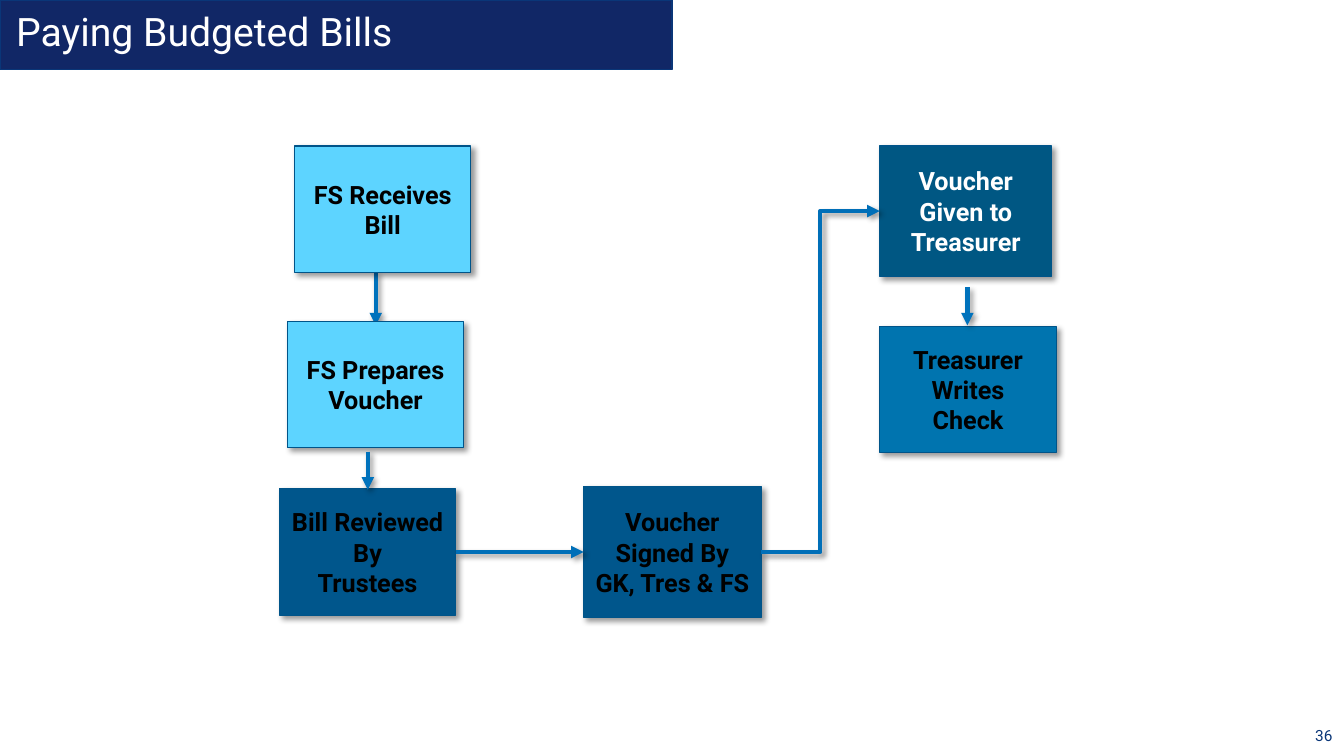
"""Build the slide that shows how budgeted bills are paid."""
import pptx
import pptx.dml.color
import pptx.enum.shapes
import pptx.enum.text
import pptx.oxml
import pptx.oxml.ns
import pptx.util

Cm = pptx.util.Cm
Pt = pptx.util.Pt
ALIGN = pptx.enum.text.PP_ALIGN
ANCHOR = pptx.enum.text.MSO_ANCHOR
SHAPE = pptx.enum.shapes.MSO_SHAPE
CONNECTOR = pptx.enum.shapes.MSO_CONNECTOR

THEME = {
    "font": "Roboto",
    "title_size": 28, "box_size": 18, "number_size": 11,
    "white": "FFFFFF", "black": "000000", "navy": "112766", "navy_edge": "0A3678",
    "sky": "5DD4FF", "deep": "00568C", "teal": "005783", "mid": "0074AF",
    "box_edge": "005489", "arrow": "0072BC", "elbow": "006FB8",
}

TITLE = "Paying Budgeted Bills"
PAGE_NUMBER = "36"
STEPS = {
    "receive": (["FS Receives", "Bill"], (7.42, 3.68, 4.45, 3.18), "sky", "black"),
    "review": (["Bill Reviewed", "By", "Trustees"], (7.04, 12.32, 4.45, 3.18), "deep", "black"),
    "prepare": (["FS Prepares", "Voucher"], (7.24, 8.1, 4.45, 3.18), "sky", "black"),
    "sign": (["Voucher", "Signed By", "GK, Tres & FS"], (14.71, 12.27, 4.47, 3.28), "deep", "black"),
    "give": (["Voucher", "Given to", "Treasurer"], (22.17, 3.68, 4.34, 3.28), "teal", "white"),
    "write": (["Treasurer", "Writes", "Check"], (22.17, 8.23, 4.45, 3.18), "mid", "black"),
}
RECEIVE_ARROW = (9.47, 6.86, 8.2)
LATER_ARROWS = [(9.27, 11.38, 12.34), (24.38, 7.24, 8.2)]
ELBOWS = [("review", "sign"), ("sign", "give")]


def color(name):
    return pptx.dml.color.RGBColor.from_string(THEME[name])


def write_text(shape, lines, *, size, ink, bold=False, align=ALIGN.LEFT,
               anchor=ANCHOR.TOP, wrap=True, spacing=None):
    frame = shape.text_frame
    frame.word_wrap = wrap
    frame.vertical_anchor = anchor
    frame.text = "\n".join(lines)
    for paragraph in frame.paragraphs:
        paragraph.alignment = align
        paragraph.line_spacing = spacing
        font = paragraph.runs[0].font
        font.name = THEME["font"]
        font.size = Pt(THEME[size])
        font.bold = bold
        font.color.rgb = color(ink)


def add_shadow(shape):
    shape._element.spPr.append(pptx.oxml.parse_xml(
        f'<a:effectLst {pptx.oxml.ns.nsdecls("a")}>'
        f'<a:outerShdw blurRad="{Pt(4)}" dist="{Pt(3)}" dir="2700000" algn="tl" rotWithShape="0">'
        f'<a:srgbClr val="{THEME["black"]}"><a:alpha val="40000"/></a:srgbClr>'
        '</a:outerShdw></a:effectLst>'))


def add_rectangle(slide, preset, place, fill, edge, width):
    shape = slide.shapes.add_shape(preset, *map(Cm, place))
    shape.fill.solid()
    shape.fill.fore_color.rgb = color(fill)
    shape.line.color.rgb = color(edge)
    shape.line.width = Pt(width)
    return shape


def add_arrow(slide, kind, ink, start=(0, 0), end=(0, 0)):
    connector = slide.shapes.add_connector(kind, *map(Cm, start + end))
    connector.line.color.rgb = color(ink)
    connector.line.width = Pt(3)
    connector.line._get_or_add_ln().append(pptx.oxml.parse_xml(
        f'<a:tailEnd {pptx.oxml.ns.nsdecls("a")} type="triangle"/>'))
    add_shadow(connector)
    return connector


def add_down_arrow(slide, x, top, bottom):
    add_arrow(slide, CONNECTOR.STRAIGHT, "arrow", (x, top), (x, bottom))


def add_heading(slide):
    bar = add_rectangle(slide, SHAPE.RECTANGLE, (0, 0, 16.94, 1.75), "navy", "navy_edge", 1)
    bar.shadow.inherit = False
    number = slide.shapes.add_textbox(*map(Cm, (32.64, 18.01, 1.19, 1.02)))
    write_text(number, [PAGE_NUMBER], size="number_size", ink="navy_edge",
               align=ALIGN.RIGHT, anchor=ANCHOR.MIDDLE)
    title = slide.shapes.add_textbox(*map(Cm, (0, 0.08, 18.06, 1.47)))
    frame = title.text_frame
    frame.margin_left = frame.margin_right = Cm(0.41)
    frame.margin_top = Cm(0.25)
    write_text(title, [TITLE], size="title_size", ink="white", spacing=0.9)


def add_flow(slide):
    add_down_arrow(slide, *RECEIVE_ARROW)
    boxes = {}
    for name, (lines, place, fill, ink) in STEPS.items():
        box = add_rectangle(slide, SHAPE.FLOWCHART_PROCESS, place, fill, "box_edge", 0.75)
        add_shadow(box)
        write_text(box, lines, size="box_size", ink=ink, bold=True,
                   align=ALIGN.CENTER, anchor=ANCHOR.MIDDLE, wrap=False)
        boxes[name] = box
    for arrow in LATER_ARROWS:
        add_down_arrow(slide, *arrow)
    for source, target in ELBOWS:
        elbow = add_arrow(slide, CONNECTOR.ELBOW, "elbow")
        elbow.begin_connect(boxes[source], 3)
        elbow.end_connect(boxes[target], 1)


def main():
    presentation = pptx.Presentation()
    presentation.slide_width = Cm(33.87)
    presentation.slide_height = Cm(19.05)
    slide = presentation.slides.add_slide(presentation.slide_layouts[6])
    add_heading(slide)
    add_flow(slide)
    presentation.save("out.pptx")


if __name__ == "__main__":
    main()
